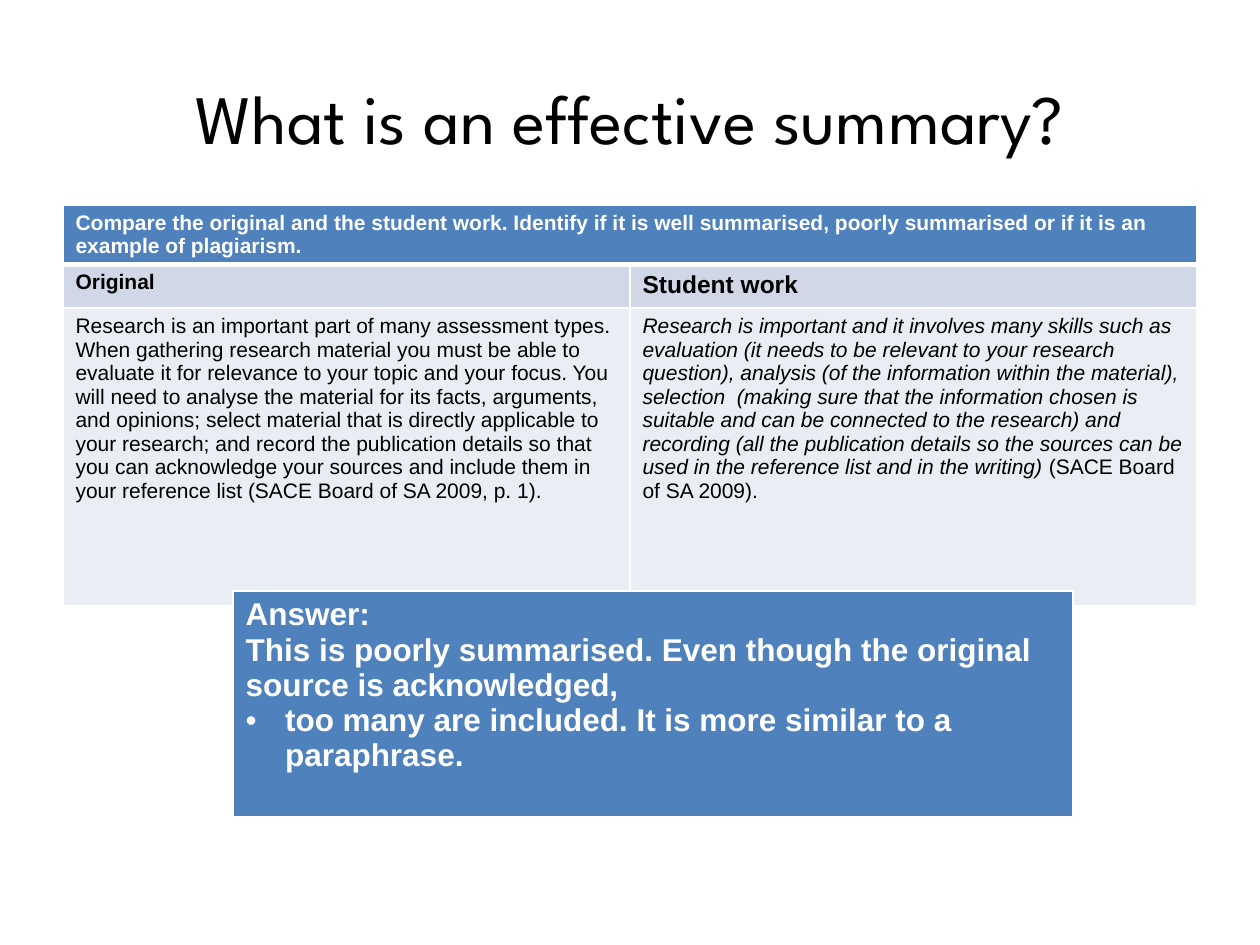
"""Build the slide comparing a source text with a student's summary."""
from dataclasses import dataclass

from lxml import etree
from pptx import Presentation
from pptx import util as u
from pptx.dml.color import RGBColor
from pptx.enum import text
from pptx.oxml.ns import qn

COLOURS = {"white": "FFFFFF", "black": "000000", "header": "4F81BD",
           "heading": "D0D8E8", "body": "E9EDF4"}
SIDES = ("L", "R", "T", "B")


@dataclass
class Span:
    words: str
    italic: bool = False


@dataclass
class Para:
    spans: list[Span]
    bullet: bool = False


@dataclass
class CellText:
    paras: list[Para]
    fill: str
    size: float = 12
    bold: bool = False
    colour: str = "black"
    top: float = 1
    bottom: float = 1


def colour_of(name: str) -> RGBColor:
    return RGBColor.from_string(COLOURS[name])


def add_span(para, span: Span, size: float, font: str, colour: str, bold: bool = False) -> None:
    run = para.add_run()
    run.text = span.words
    run.font.size = u.Pt(size)
    run.font.name = font
    run.font.bold = bold
    run.font.italic = span.italic
    run.font.color.rgb = colour_of(colour)


def add_bullet(para, indent: float) -> None:
    properties = para._p.get_or_add_pPr()
    properties.set("marL", str(u.Pt(indent)))
    properties.set("indent", str(-u.Pt(indent)))
    etree.SubElement(properties, qn("a:buFont"), typeface="Arial")
    etree.SubElement(properties, qn("a:buChar"), char="•")


def set_borders(cell, widths: dict[str, float]) -> None:
    properties = cell._tc.get_or_add_tcPr()
    for position, side in enumerate(SIDES):
        line = etree.Element(qn(f"a:ln{side}"), w=str(u.Pt(widths[side])))
        fill = etree.SubElement(line, qn("a:solidFill"))
        etree.SubElement(fill, qn("a:srgbClr"), val=COLOURS["white"])
        properties.insert(position, line)


def fill_cell(cell, content: CellText) -> None:
    cell.fill.solid()
    cell.fill.fore_color.rgb = colour_of(content.fill)
    set_borders(cell, {"L": 1, "R": 1, "T": content.top, "B": content.bottom})
    frame = cell.text_frame
    for number, item in enumerate(content.paras):
        para = frame.add_paragraph() if number else frame.paragraphs[0]
        if item.bullet:
            add_bullet(para, 22.5)
        for span in item.spans:
            add_span(para, span, content.size, "Arial", content.colour, content.bold)


def add_grid(page, left: float, top: float, width: float, heights: list[float],
             rows: list[list[CellText]]) -> None:
    columns = max(len(row) for row in rows)
    table = page.shapes.add_table(len(rows), columns, u.Pt(left), u.Pt(top),
                                  u.Pt(width), u.Pt(sum(heights))).table
    for row, height in zip(table.rows, heights):
        row.height = u.Pt(height)
    for number, row in enumerate(rows):
        if len(row) < columns:
            table.cell(number, 0).merge(table.cell(number, columns - 1))
        for column, content in enumerate(row):
            fill_cell(table.cell(number, column), content)


def add_title(page, words: str) -> None:
    box = page.shapes.add_textbox(u.Pt(36), u.Pt(21.6), u.Pt(648), u.Pt(90))
    frame = box.text_frame
    frame.word_wrap = True
    frame.vertical_anchor = text.MSO_ANCHOR.MIDDLE
    para = frame.paragraphs[0]
    para.alignment = text.PP_ALIGN.CENTER
    add_span(para, Span(words), 39.6, "League Spartan", "black")


def plain(words: str, bullet: bool = False) -> Para:
    return Para([Span(words)], bullet)


TASK = ("Compare the original and the student work. Identify if it is well summarised, "
        "poorly summarised or if it is an example of plagiarism.")
ORIGINAL = ("Research is an important part of many assessment types. When gathering research "
            "material you must be able to evaluate it for relevance to your topic and your focus. "
            "You will need to analyse the material for its facts, arguments, and opinions; select "
            "material that is directly applicable to your research; and record the publication "
            "details so that you can acknowledge your sources and include them in your reference "
            "list (SACE Board of SA 2009, p. 1).")
STUDENT = ("Research is important and it involves many skills such as evaluation (it needs to be "
           "relevant to your research question), analysis (of the information within the material), "
           "selection  (making sure that the information chosen is suitable and can be connected to "
           "the research) and recording (all the publication details so the sources can be used in "
           "the reference list and in the writing) ")
COMPARISON = [
    [CellText([plain(TASK)], "header", bold=True, colour="white", bottom=3)],
    [CellText([plain("Original")], "heading", bold=True, top=3),
     CellText([plain("Student work")], "heading", size=14, bold=True, top=3)],
    [CellText([plain(ORIGINAL)], "body"),
     CellText([Para([Span(STUDENT, True), Span("(SACE Board of SA 2009).")])], "body")],
]
ANSWER = [[CellText([
    plain("Answer:"),
    plain("This is poorly summarised. Even though the original source is acknowledged,"),
    plain("too many are included. It is more similar to a paraphrase.", bullet=True),
], "header", size=18, bold=True, colour="white", bottom=3)]]


def main() -> None:
    deck = Presentation()
    deck.slide_width, deck.slide_height = u.Pt(720), u.Pt(540)
    page = deck.slides.add_slide(deck.slide_layouts[6])
    add_grid(page, 36, 117, 648, [33.5, 25, 170], COMPARISON)
    add_title(page, "What is an effective summary?")
    add_grid(page, 133.2, 337.7, 480, [130], ANSWER)
    deck.save("out.pptx")


if __name__ == "__main__":
    main()
